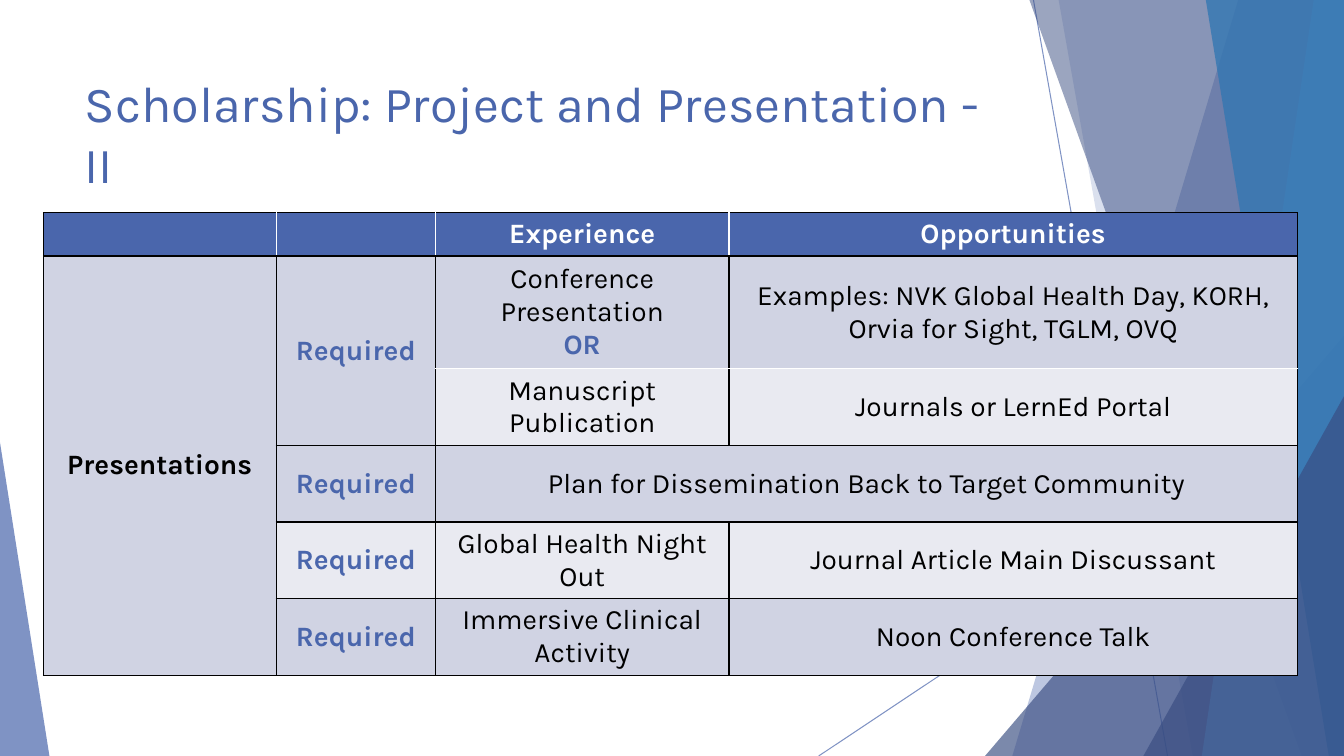
"""Builds the slide on scholarship projects and presentations."""
from dataclasses import dataclass

from lxml import etree
from pptx import Presentation
from pptx.dml.color import RGBColor
from pptx.enum.shapes import MSO_CONNECTOR, MSO_SHAPE
from pptx.enum.text import MSO_ANCHOR, MSO_AUTO_SIZE, PP_ALIGN
from pptx.oxml.ns import qn
from pptx.util import Inches, Pt

STRAIGHT = MSO_CONNECTOR.STRAIGHT
TRIANGLE = MSO_SHAPE.ISOSCELES_TRIANGLE
TOP, MIDDLE = MSO_ANCHOR.TOP, MSO_ANCHOR.MIDDLE
LEFT, CENTER = PP_ALIGN.LEFT, PP_ALIGN.CENTER
NO_AUTOFIT = MSO_AUTO_SIZE.NONE


@dataclass(frozen=True)
class Theme:
    """Colours, font and type sizes."""
    font: str = "Karla"
    title_size: int = 36
    cell_size: int = 20
    accent: str = "4A66AC"
    navy: str = "384C81"
    sky: str = "629DD1"
    ocean: str = "3477B2"
    band_dark: str = "D0D3E3"
    band_light: str = "E9EAF1"
    black: str = "000000"
    white: str = "FFFFFF"


THEME = Theme()
WIDTH, HEIGHT = 13.33, 7.5

TITLE = "Scholarship: Project and Presentation - II"
TITLE_BOX = (0.74, 0.67, 9.4, 1.44)

RAYS = [((10.25, 0), (11.58, HEIGHT)), ((WIDTH, 4.03), (8.12, HEIGHT))]
FACETS = [
    ("band", (12.28, 10.04), THEME.accent, 36),
    ("band", (10.5, 11.83), THEME.accent, 20),
    ("corner", (9.77, 3.33, WIDTH, 1), THEME.navy, 66),
    ("band", (10.21, 12.91), THEME.navy, 50),
    ("band", (13.03, 11.92), THEME.sky, 70),
    ("band", (11.96, 13.18), THEME.ocean, 80),
    ("corner", (11.34, 3.93, WIDTH, 1), THEME.navy, 66),
    ("corner", (0, 4.39, 0.49, 0), THEME.accent, 70),
]

TABLE_AT = (0.43, 2.11)
COLUMNS = [2.31, 1.58, 2.91, 5.64]
ROWS = [0.43, 1.12] + [0.76] * 4
CELLS = [
    ["", "", "Experience", "Opportunities"],
    ["Presentations", "Required", "Conference Presentation\nOR",
     "Examples: NVK Global Health Day, KORH, Orvia for Sight, TGLM, OVQ"],
    ["", "", "Manuscript Publication", "Journals or LernEd Portal"],
    ["", "Required", "Plan for Dissemination Back to Target Community", ""],
    ["", "Required", "Global Health Night Out", "Journal Article Main Discussant"],
    ["", "Required", "Immersive Clinical Activity", "Noon Conference Talk"],
]
MERGES = [((1, 0), (5, 0)), ((1, 1), (2, 1)), ((3, 2), (3, 3))]
LIGHT_ROWS = (2, 4)
HIGHLIGHTS = ("Required", "OR")


def inches(values):
    return [Inches(v) for v in values]


def set_alpha(fill_parent, percent):
    color = next(fill_parent.iter(qn("a:srgbClr")))
    etree.SubElement(color, qn("a:alpha"), val=str(percent * 1000))


def add_run(p, text, size, color, bold=False):
    r = p.add_run()
    r.text = text
    r.font.name = THEME.font
    r.font.size = Pt(size)
    r.font.bold = bold
    r.font.color.rgb = RGBColor.from_string(color)


def add_ray(s, start, end):
    line = s.shapes.add_connector(STRAIGHT, *inches(start + end))
    line.line.color.rgb = RGBColor.from_string(THEME.accent)
    line.line.width = Pt(0.75)
    sp_pr = line._element.spPr
    set_alpha(sp_pr, 70)
    etree.SubElement(sp_pr, qn("a:effectLst"))


def add_facet(s, kind, geometry, color, opacity):
    if kind == "band":
        top, bottom = geometry
        points = [(top, 0), (WIDTH, 0), (WIDTH, HEIGHT), (bottom, HEIGHT)]
        points = [tuple(inches(point)) for point in points]
        builder = s.shapes.build_freeform(*points[0])
        builder.add_line_segments(points[1:], close=True)
        sp = builder.convert_to_shape()
    else:
        left, top, right, apex = geometry
        box = inches((left, top, right - left, HEIGHT - top))
        sp = s.shapes.add_shape(TRIANGLE, *box)
        sp.adjustments[0] = apex
    sp.shadow.inherit = False
    sp.fill.solid()
    sp.fill.fore_color.rgb = RGBColor.from_string(color)
    set_alpha(sp._element.spPr, opacity)
    sp.line.fill.background()


def add_title(s):
    title = s.shapes.title
    title.left, title.top, title.width, title.height = inches(TITLE_BOX)
    tf = title.text_frame
    tf.word_wrap = True
    tf.auto_size = NO_AUTOFIT
    tf.vertical_anchor = TOP
    p = tf.paragraphs[0]
    p.alignment = LEFT
    add_run(p, TITLE, THEME.title_size, THEME.accent)


def edge_colors(row, col):
    """Return the left, right, top and bottom border colours of a cell."""
    header, choice = row == 0, col >= 2
    white = (header and col > 0, header and col < len(COLUMNS) - 1,
             choice and row == 2, choice and row == 1)
    return [THEME.white if is_white else THEME.black for is_white in white]


def set_borders(cell, colors):
    tc_pr = cell._tc.get_or_add_tcPr()
    for i, (side, color) in enumerate(zip("LRTB", colors)):
        ln = etree.Element(qn(f"a:ln{side}"), w=str(Pt(1)))
        fill = etree.SubElement(ln, qn("a:solidFill"))
        etree.SubElement(fill, qn("a:srgbClr"), val=color)
        tc_pr.insert(i, ln)


def fill_cell(cell, row, col, text):
    header = row == 0
    band = THEME.band_light if row in LIGHT_ROWS else THEME.band_dark
    cell.fill.solid()
    cell.fill.fore_color.rgb = RGBColor.from_string(THEME.accent if header else band)
    set_borders(cell, edge_colors(row, col))
    cell.vertical_anchor = MIDDLE
    tf = cell.text_frame
    for i, line in enumerate(text.split("\n") if text else []):
        p = tf.add_paragraph() if i else tf.paragraphs[0]
        p.alignment = CENTER
        highlight = line in HIGHLIGHTS
        color = THEME.white if header else THEME.accent if highlight else THEME.black
        add_run(p, line, THEME.cell_size, color, header or highlight or col == 0)


def add_schedule(s):
    box = inches((*TABLE_AT, sum(COLUMNS), sum(ROWS)))
    table = s.shapes.add_table(len(ROWS), len(COLUMNS), *box).table
    for column, width in zip(table.columns, COLUMNS):
        column.width = Inches(width)
    for table_row, height in zip(table.rows, ROWS):
        table_row.height = Inches(height)
    for first, last in MERGES:
        table.cell(*first).merge(table.cell(*last))
    for row, texts in enumerate(CELLS):
        for col, text in enumerate(texts):
            fill_cell(table.cell(row, col), row, col, text)


def main():
    prs = Presentation()
    prs.slide_width, prs.slide_height = inches((WIDTH, HEIGHT))
    s = prs.slides.add_slide(prs.slide_layouts[5])
    for ray in RAYS:
        add_ray(s, *ray)
    for facet in FACETS:
        add_facet(s, *facet)
    add_title(s)
    add_schedule(s)
    prs.save("out.pptx")


if __name__ == "__main__":
    main()
